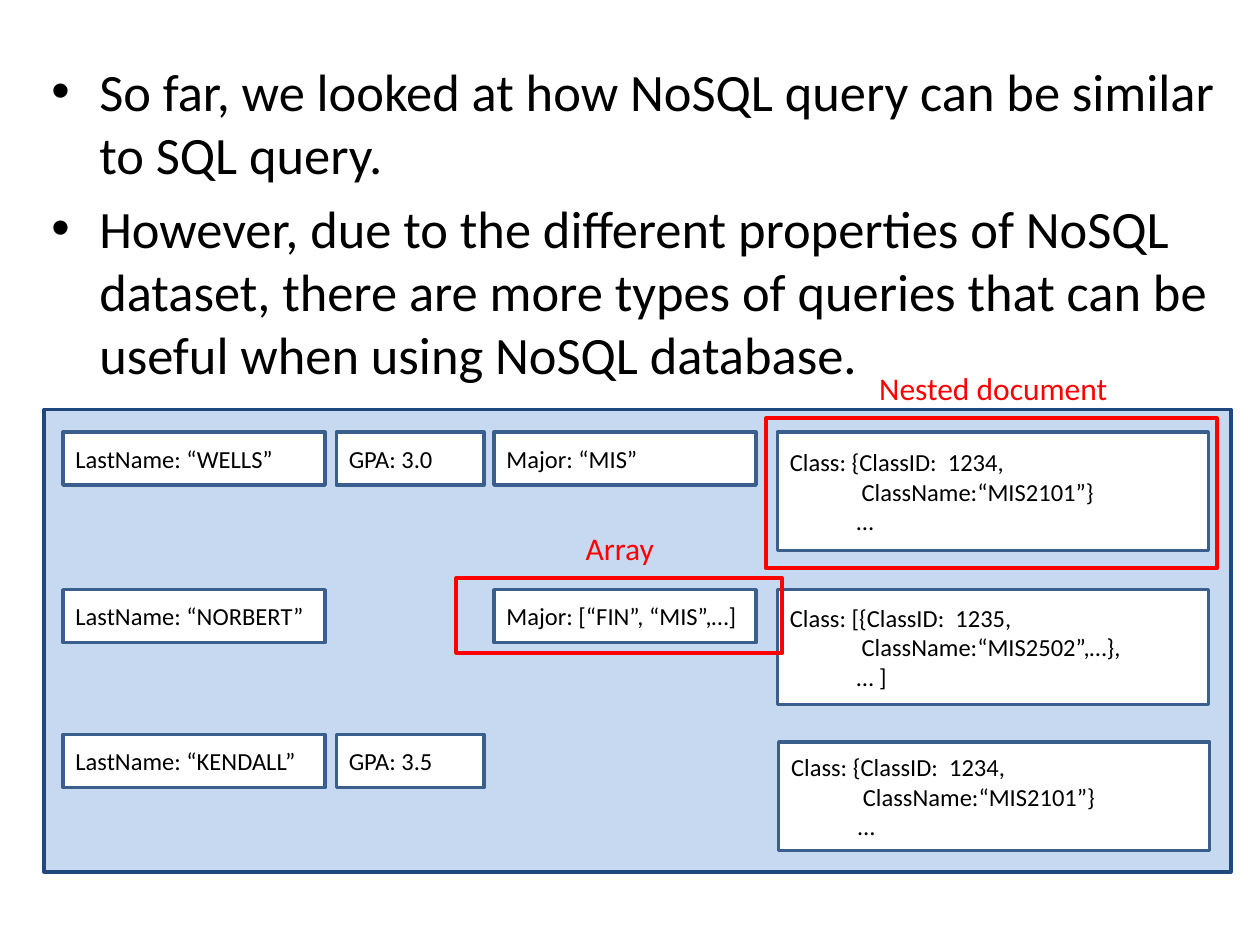
from dataclasses import dataclass

import pptx
import pptx.dml.color
import pptx.enum.shapes
import pptx.enum.text
import pptx.util
from lxml import etree
from pptx.oxml.ns import qn
from pptx.util import Inches, Pt

FONT = "Calibri"
BLACK, WHITE, RED = "000000", "FFFFFF", "FF0000"
PANEL_FILL, PANEL_LINE, FIELD_LINE = "C6D9F1", "1F497D", "3A5F8C"


@dataclass
class Box:
    left: float
    top: float
    width: float
    height: float

    def lengths(self) -> list:
        return [Inches(v) for v in (self.left, self.top, self.width, self.height)]


@dataclass
class Line:
    text: str
    indent: float = 0


@dataclass
class Field:
    box: Box
    lines: list[Line]


@dataclass
class Callout:
    frame: Box
    label_box: Box
    label: str


def color(hex_code: str) -> pptx.dml.color.RGBColor:
    return pptx.dml.color.RGBColor.from_string(hex_code)


def add_rect(slide, box: Box, fill: str | None, line: str, weight: float):
    rect = slide.shapes.add_shape(
        pptx.enum.shapes.MSO_SHAPE.RECTANGLE, *box.lengths())
    rect.shadow.inherit = False
    if fill:
        rect.fill.solid()
        rect.fill.fore_color.rgb = color(fill)
    else:
        rect.fill.background()
    rect.line.color.rgb = color(line)
    rect.line.width = Pt(weight)
    return rect


def write_lines(frame, lines: list[Line], size: float, text_color: str) -> None:
    font_format = {"name": FONT, "size": Pt(size)}
    for index, line in enumerate(lines):
        paragraph = frame.add_paragraph() if index else frame.paragraphs[0]
        paragraph.alignment = pptx.enum.text.PP_ALIGN.LEFT
        if line.indent:
            paragraph._p.get_or_add_pPr().set("marL", str(Inches(line.indent)))
        run = paragraph.add_run()
        run.text = line.text
        for name, value in font_format.items():
            setattr(run.font, name, value)
        run.font.color.rgb = color(text_color)


def add_text(slide, box: Box, lines: list[Line], size: float,
             text_color: str, wrap: bool):
    frame = slide.shapes.add_textbox(*box.lengths()).text_frame
    frame_format = {
        "word_wrap": wrap,
        "auto_size": pptx.enum.text.MSO_AUTO_SIZE.SHAPE_TO_FIT_TEXT,
    }
    for name, value in frame_format.items():
        setattr(frame, name, value)
    write_lines(frame, lines, size, text_color)
    return frame


def add_bullets(frame, hanging: float) -> None:
    for paragraph in frame.paragraphs:
        paragraph.space_before = Pt(6)
        properties = paragraph._p.get_or_add_pPr()
        properties.set("marL", str(Inches(hanging)))
        properties.set("indent", str(-Inches(hanging)))
        etree.SubElement(properties, qn("a:buFont")).set("typeface", "Arial")
        etree.SubElement(properties, qn("a:buChar")).set("char", "•")


def add_field(slide, field: Field) -> None:
    rect = add_rect(slide, field.box, WHITE, FIELD_LINE, 2)
    rect.text_frame.vertical_anchor = pptx.enum.text.MSO_ANCHOR.MIDDLE
    write_lines(rect.text_frame, field.lines, 14, BLACK)


def add_callout(slide, callout: Callout) -> None:
    add_rect(slide, callout.frame, None, RED, 2.25)
    add_text(slide, callout.label_box, [Line(callout.label)], 18, RED, False)


def simple_field(column: str, top: float, value: str) -> Field:
    left, width = {"LastName": (0.5, 2.08), "GPA": (2.67, 1.17),
                   "Major": (3.92, 2.08)}[column]
    return Field(Box(left, top, width, 0.42), [Line(f"{column}: {value}")])


def class_field(box: Box, opening: str, name: str, ending: str) -> Field:
    return Field(box, [Line(f"Class: {opening}"),
                       Line(f"ClassName:{name}", 0.57), Line(ending, 0.53)])


ROW_TOPS = (3.43, 4.68, 5.83)

FIELDS = [
    simple_field("LastName", ROW_TOPS[0], "“WELLS”"),
    simple_field("GPA", ROW_TOPS[0], "3.0"),
    simple_field("Major", ROW_TOPS[0], "“MIS”"),
    class_field(Box(6.17, 3.43, 3.42, 0.94),
                "{ClassID:  1234,", "“MIS2101”}", "…"),
    simple_field("LastName", ROW_TOPS[1], "“NORBERT”"),
    simple_field("Major", ROW_TOPS[1], "[“FIN”, “MIS”,…]"),
    class_field(Box(6.17, 4.68, 3.42, 0.91),
                "[{ClassID:  1235,", "“MIS2502”,…},", "… ]"),
    simple_field("LastName", ROW_TOPS[2], "“KENDALL”"),
    simple_field("GPA", ROW_TOPS[2], "3.5"),
    class_field(Box(6.18, 5.89, 3.42, 0.86),
                "{ClassID:  1234,", "“MIS2101”}", "…"),
]

CALLOUTS = [
    Callout(Box(3.62, 4.59, 2.59, 0.59), Box(4.55, 4.15, 0.75, 0.4), "Array"),
    Callout(Box(6.08, 3.32, 3.58, 1.19), Box(6.88, 2.88, 2.03, 0.4),
            "Nested document"),
]

POINTS = [
    Line("So far, we looked at how NoSQL query can be similar to SQL query."),
    Line("However, due to the different properties of NoSQL dataset, there are "
         "more types of queries that can be useful when using NoSQL database."),
]


def main() -> None:
    deck = pptx.Presentation()
    deck.slide_width, deck.slide_height = Inches(10), Inches(7.5)
    slide = deck.slides.add_slide(deck.slide_layouts[6])

    # Collection panel with its records
    add_rect(slide, Box(0.35, 3.25, 9.42, 3.67), PANEL_FILL, PANEL_LINE, 2)
    for field in FIELDS:
        add_field(slide, field)

    # Bulleted introduction
    introduction = add_text(slide, Box(0.31, 0.42, 9.5, 3.33), POINTS, 30,
                            BLACK, True)
    add_bullets(introduction, 0.38)

    # Red callouts
    for callout in CALLOUTS:
        add_callout(slide, callout)

    deck.save("out.pptx")


if __name__ == "__main__":
    main()
